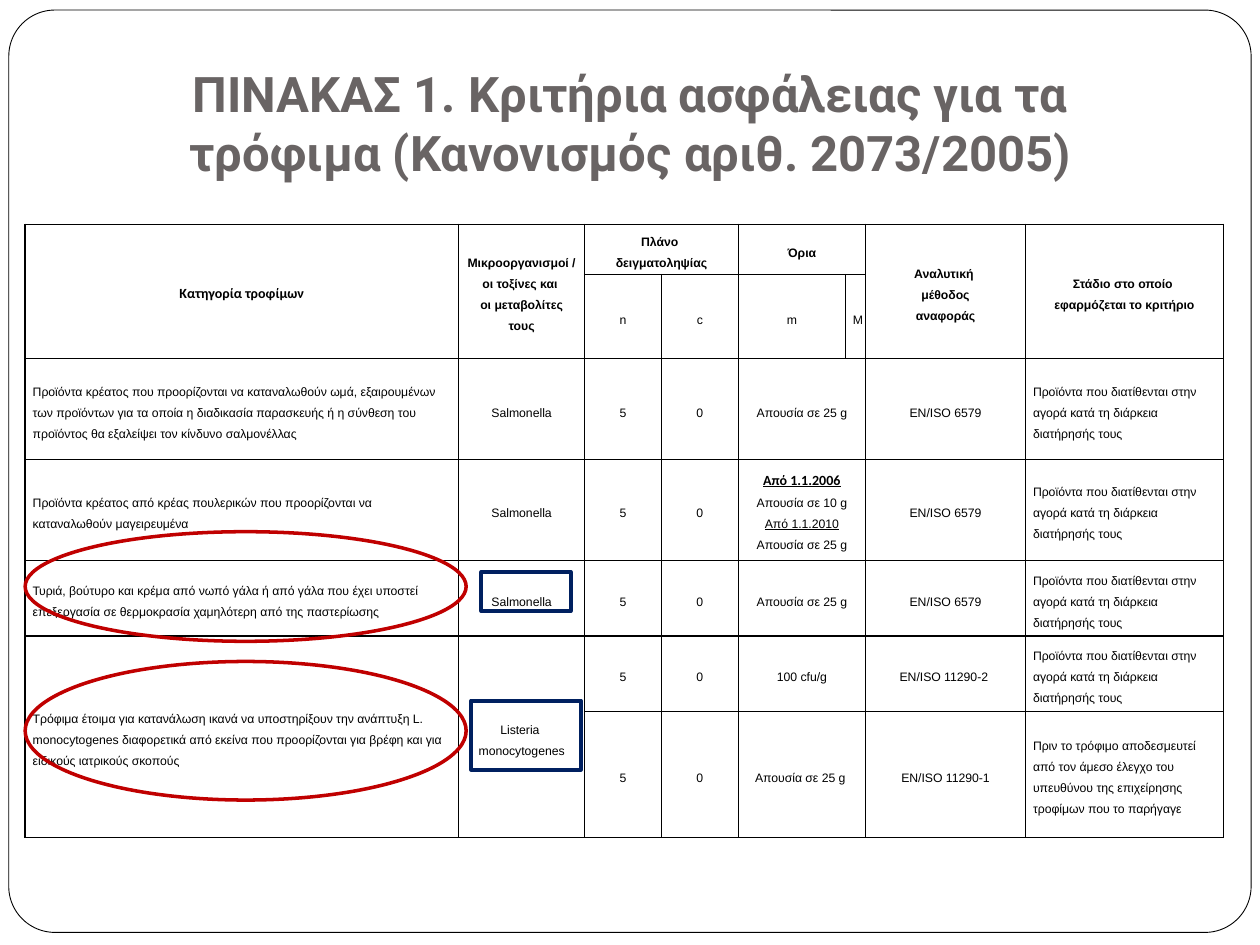
from dataclasses import dataclass

from lxml.etree import SubElement
from pptx import Presentation
from pptx.dml.color import RGBColor
from pptx.enum.shapes import MSO_SHAPE
from pptx.enum.text import MSO_ANCHOR, PP_ALIGN
from pptx.oxml.ns import qn
from pptx.util import Inches, Pt


@dataclass(frozen=True)
class Theme:
    title_font: str = "Roboto"
    body_font: str = "Arial"
    accent_font: str = "Calibri"
    title_size: float = 28
    body_size: float = 7
    accent_size: float = 8
    line_spacing: float = 12
    white: str = "FFFFFF"
    black: str = "000000"
    title_color: str = "696464"
    red: str = "C00000"
    navy: str = "002060"


THEME = Theme()
ACCENT = {"name": THEME.accent_font, "size": Pt(THEME.accent_size), "bold": True}

TITLE = "ΠΙΝΑΚΑΣ 1. Κριτήρια ασφάλειας για τα τρόφιμα (Κανονισμός αριθ. 2073/2005)"
COLUMN_WIDTHS = [3.44, 1, 0.61, 0.61, 0.85, 0.16, 1.27, 1.57]
ROW_HEIGHTS = [0.4, 0.6, 0.8, 0.8, 0.6, 0.6, 1]
HEADER_ROWS = 2
LEFT_COLUMNS = (0, 7)
LIMIT_COLUMN = 4

MARKET_STAGE = "Προϊόντα που διατίθενται στην αγορά κατά τη διάρκεια διατήρησής τους"
ABSENCE = "Απουσία σε 25 g"

# A cell is a list of paragraphs; a paragraph is a string or a list of (text, font values).
POULTRY_LIMITS = [
    [("Από 1.1.2006", {**ACCENT, "underline": True})],
    [("Απουσία σε 10 g ", {}), ("Από 1.1.2010", {"underline": True})],
    ABSENCE,
]
HEADINGS = [
    [[("Κατηγορία τροφίμων", ACCENT)]],
    ["Μικροοργανισμοί / ", "οι τοξίνες και ", "οι μεταβολίτες τους"],
    ["Πλάνο ", "δειγματοληψίας"],
    None,
    ["Όρια"],
    None,
    ["Αναλυτική ", "μέθοδος", "αναφοράς"],
    ["Στάδιο στο οποίο ", "εφαρμόζεται το κριτήριο"],
]
SUBHEADINGS = [None, None, ["n"], ["c"], ["m"], ["M"], None, None]


def criterion(category, organism, limits, method, stage=MARKET_STAGE):
    """Return one table row; every sampling plan has n = 5 and c = 0."""
    return [category and [category], organism, ["5"], ["0"], limits, None, [method], [stage]]


ROWS = [
    HEADINGS,
    SUBHEADINGS,
    criterion("Προϊόντα κρέατος που προορίζονται να καταναλωθούν ωμά, εξαιρουμένων των "
              "προϊόντων για τα οποία η διαδικασία παρασκευής ή η σύνθεση του προϊόντος "
              "θα εξαλείψει τον κίνδυνο σαλμονέλλας",
              ["Salmonella"], [ABSENCE], "EN/ISO 6579"),
    criterion("Προϊόντα κρέατος από κρέας πουλερικών που προορίζονται να καταναλωθούν "
              "μαγειρευμένα",
              ["Salmonella"], POULTRY_LIMITS, "EN/ISO 6579"),
    criterion("Τυριά, βούτυρο και κρέμα από νωπό γάλα ή από γάλα που έχει υποστεί "
              "επεξεργασία σε θερμοκρασία χαμηλότερη από της παστερίωσης",
              ["Salmonella"], [ABSENCE], "EN/ISO 6579"),
    criterion("Τρόφιμα έτοιμα για κατανάλωση ικανά να υποστηρίξουν την ανάπτυξη L. "
              "monocytogenes διαφορετικά από εκείνα που προορίζονται για βρέφη και για "
              "ειδικούς ιατρικούς σκοπούς",
              ["Listeria ", "monocytogenes"], ["100 cfu/g"], "EN/ISO 11290-2 "),
    criterion(None, None, [ABSENCE + " "], "EN/ISO 11290-1",
              "Πριν το τρόφιμο αποδεσμευτεί από τον άμεσο έλεγχο του υπευθύνου της "
              "επιχείρησης τροφίμων που το παρήγαγε"),
]
MERGES = (
    [((0, column), (1, column)) for column in (0, 1, 6, 7)]
    + [((0, column), (0, column + 1)) for column in (2, 4)]
    + [((row, LIMIT_COLUMN), (row, LIMIT_COLUMN + 1)) for row in range(HEADER_ROWS, len(ROWS))]
    + [((5, column), (6, column)) for column in (0, 1)]
)


def set_values(target, values):
    for name, value in values.items():
        setattr(target, name, value)


class SlideBuilder:
    def __init__(self, slide, theme):
        self.slide = slide
        self.theme = theme

    def add_title(self, text, left, top, width, height):
        title = self.slide.shapes.title
        set_values(title, {"left": Inches(left), "top": Inches(top),
                           "width": Inches(width), "height": Inches(height)})
        frame = title.text_frame
        set_values(frame, {"text": text, "word_wrap": True,
                           "vertical_anchor": MSO_ANCHOR.BOTTOM,
                           "margin_left": Inches(0.1), "margin_right": Inches(0.1),
                           "margin_top": Inches(0.05), "margin_bottom": Inches(0.1)})
        paragraph = frame.paragraphs[0]
        paragraph.alignment = PP_ALIGN.CENTER
        font = paragraph.runs[0].font
        set_values(font, {"name": self.theme.title_font,
                          "size": Pt(self.theme.title_size), "bold": True})
        font.color.rgb = RGBColor.from_string(self.theme.title_color)

    def add_outline(self, kind, left, top, width, height, color, weight, fill=None):
        shape = self.slide.shapes.add_shape(
            kind, Inches(left), Inches(top), Inches(width), Inches(height))
        shape.shadow.inherit = False
        if fill:
            shape.fill.solid()
            shape.fill.fore_color.rgb = RGBColor.from_string(fill)
        else:
            shape.fill.background()
        shape.line.color.rgb = RGBColor.from_string(color)
        shape.line.width = Pt(weight)
        return shape

    def add_frame(self, left, top, width, height):
        """Draw the rounded page frame behind the title."""
        frame = self.add_outline(MSO_SHAPE.ROUNDED_RECTANGLE, left, top, width, height,
                                 self.theme.black, 0.5, self.theme.white)
        frame.adjustments[0] = 0.05
        self.slide.shapes.title.element.addprevious(frame.element)

    def add_table(self, rows, left, top):
        table = self.slide.shapes.add_table(
            len(rows), len(COLUMN_WIDTHS), Inches(left), Inches(top),
            Inches(sum(COLUMN_WIDTHS)), Inches(sum(ROW_HEIGHTS))).table
        set_values(table, {"first_row": False, "horz_banding": False})
        for column, width in zip(table.columns, COLUMN_WIDTHS):
            column.width = Inches(width)
        for row, height in zip(table.rows, ROW_HEIGHTS):
            row.height = Inches(height)
        for first, last in MERGES:
            table.cell(*first).merge(table.cell(*last))
        for row_index, row in enumerate(rows):
            for column_index, paragraphs in enumerate(row):
                cell = table.cell(row_index, column_index)
                self.format_cell(cell)
                is_left = row_index >= HEADER_ROWS and column_index in LEFT_COLUMNS
                alignment = PP_ALIGN.LEFT if is_left else PP_ALIGN.CENTER
                self.fill_cell(cell, paragraphs or [], alignment, bold=row_index == 0)

    def format_cell(self, cell):
        set_values(cell, {"vertical_anchor": MSO_ANCHOR.MIDDLE,
                          "margin_left": Inches(0.06), "margin_right": Inches(0.06),
                          "margin_top": 0, "margin_bottom": 0})
        properties = cell._tc.get_or_add_tcPr()
        for side in ("a:lnL", "a:lnR", "a:lnT", "a:lnB"):
            line = SubElement(properties, qn(side), w=str(Pt(1)))
            fill = SubElement(line, qn("a:solidFill"))
            SubElement(fill, qn("a:srgbClr"), val=self.theme.black)
        cell.fill.background()

    def fill_cell(self, cell, paragraphs, alignment, bold):
        frame = cell.text_frame
        for index, runs in enumerate(paragraphs):
            paragraph = frame.add_paragraph() if index else frame.paragraphs[0]
            set_values(paragraph, {"alignment": alignment,
                                   "line_spacing": Pt(self.theme.line_spacing)})
            for text, values in [(runs, {})] if isinstance(runs, str) else runs:
                run = paragraph.add_run()
                run.text = text
                set_values(run.font, {"name": self.theme.body_font,
                                      "size": Pt(self.theme.body_size),
                                      "bold": bold, **values})
                run.font.color.rgb = RGBColor.from_string(self.theme.black)


def main():
    presentation = Presentation()
    set_values(presentation, {"slide_width": Inches(10), "slide_height": Inches(7.5)})
    slide = presentation.slides.add_slide(presentation.slide_layouts[5])
    builder = SlideBuilder(slide, THEME)
    builder.add_frame(0.07, 0.08, 9.86, 7.32)
    builder.add_title(TITLE, 0.75, 0.29, 8.5, 1.25)
    builder.add_table(ROWS, 0.2, 1.78)
    for top, height in ((4.22, 0.87), (5.25, 1.1)):
        builder.add_outline(MSO_SHAPE.OVAL, 0.2, top, 3.5, height, THEME.red, 2)
    for box in ((3.82, 4.54, 0.71, 0.31), (3.74, 5.56, 0.87, 0.55)):
        builder.add_outline(MSO_SHAPE.RECTANGLE, *box, THEME.navy, 2.25)
    presentation.save("out.pptx")


if __name__ == "__main__":
    main()
